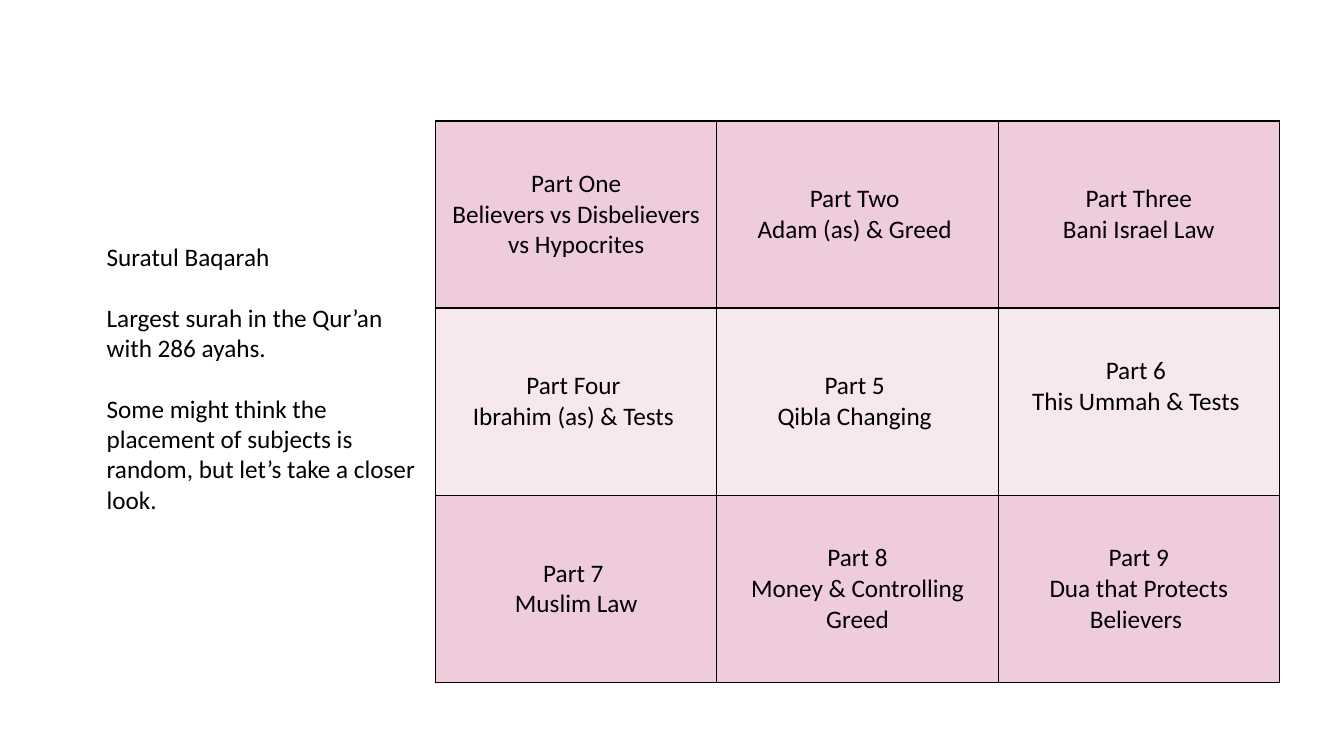
"""Build a slide that maps the nine parts of Suratul Baqarah."""
from dataclasses import dataclass

from lxml.etree import SubElement
from pptx import Presentation
from pptx.dml.color import RGBColor
from pptx.enum.text import MSO_ANCHOR, MSO_AUTO_SIZE, PP_ALIGN
from pptx.oxml.ns import qn
from pptx.slide import Slide
from pptx.table import _Cell
from pptx.text.text import TextFrame
from pptx.util import Inches, Pt

INK = "000000"
FILLS = ("EFCCDB", "F7E8EE")
COLS = 3
WIDTH, HEIGHT = 8.37, 5.57
NOTES = (
    "Suratul Baqarah",
    "Largest surah in the Qur’an with 286 ayahs.",
    "Some might think the placement of subjects is random, but let’s take a closer look.",
)


@dataclass
class Part:
    name: str
    topic: str
    foot: float = 0.05


PARTS = (
    Part("Part One", "Believers vs Disbelievers vs Hypocrites"),
    Part("Part Two ", "Adam (as) & Greed "),
    Part("Part Three", "Bani Israel Law"),
    Part("Part Four ", "Ibrahim (as) & Tests "),
    Part("Part 5 ", "Qibla Changing "),
    Part("Part 6 ", "This Ummah & Tests ", foot=0.35),
    Part("Part 7 ", "Muslim Law"),
    Part("Part 8", "Money & Controlling Greed"),
    Part("Part 9", "Dua that Protects Believers "),
)


def color(code: str) -> RGBColor:
    return RGBColor.from_string(code)


def write(frame: TextFrame, lines: tuple[str, ...], align: PP_ALIGN, gap: float = 0) -> None:
    for i, line in enumerate(lines):
        para = frame.add_paragraph() if i else frame.paragraphs[0]
        para.text = line
        para.alignment = align
        para.space_before = Pt(gap if i else 0)
        para.font.name = "Calibri"
        para.font.size = Pt(18)
        para.font.color.rgb = color(INK)


def border(cell: _Cell) -> None:
    props = cell._tc.get_or_add_tcPr()
    for i, side in enumerate(("lnL", "lnR", "lnT", "lnB")):
        line = props.makeelement(qn(f"a:{side}"), {"w": str(Pt(1))})
        fill = SubElement(line, qn("a:solidFill"))
        SubElement(fill, qn("a:srgbClr"), {"val": INK})
        props.insert(i, line)


def draw_grid(slide: Slide) -> None:
    rows = len(PARTS) // COLS
    box = slide.shapes.add_table(
        rows, COLS, Inches(4.32), Inches(1.2), Inches(WIDTH), Inches(HEIGHT)
    )
    table = box.table
    table.first_row = False
    table.horz_banding = False
    for i, part in enumerate(PARTS):
        row, col = divmod(i, COLS)
        cell = table.cell(row, col)
        cell.fill.solid()
        cell.fill.fore_color.rgb = color(FILLS[row % 2])
        cell.vertical_anchor = MSO_ANCHOR.MIDDLE
        cell.margin_bottom = Inches(part.foot)
        write(cell.text_frame, (part.name, part.topic), PP_ALIGN.CENTER)
        border(cell)


def draw_notes(slide: Slide) -> None:
    box = slide.shapes.add_textbox(Inches(0.96), Inches(2.34), Inches(3.36), Inches(2.83))
    frame = box.text_frame
    frame.word_wrap = True
    frame.auto_size = MSO_AUTO_SIZE.SHAPE_TO_FIT_TEXT
    write(frame, NOTES, PP_ALIGN.LEFT, gap=22)


def main() -> None:
    deck = Presentation()
    deck.slide_width = Inches(13.33)
    deck.slide_height = Inches(7.5)
    slide = deck.slides.add_slide(deck.slide_layouts[6])
    draw_grid(slide)
    draw_notes(slide)
    deck.save("out.pptx")


if __name__ == "__main__":
    main()
